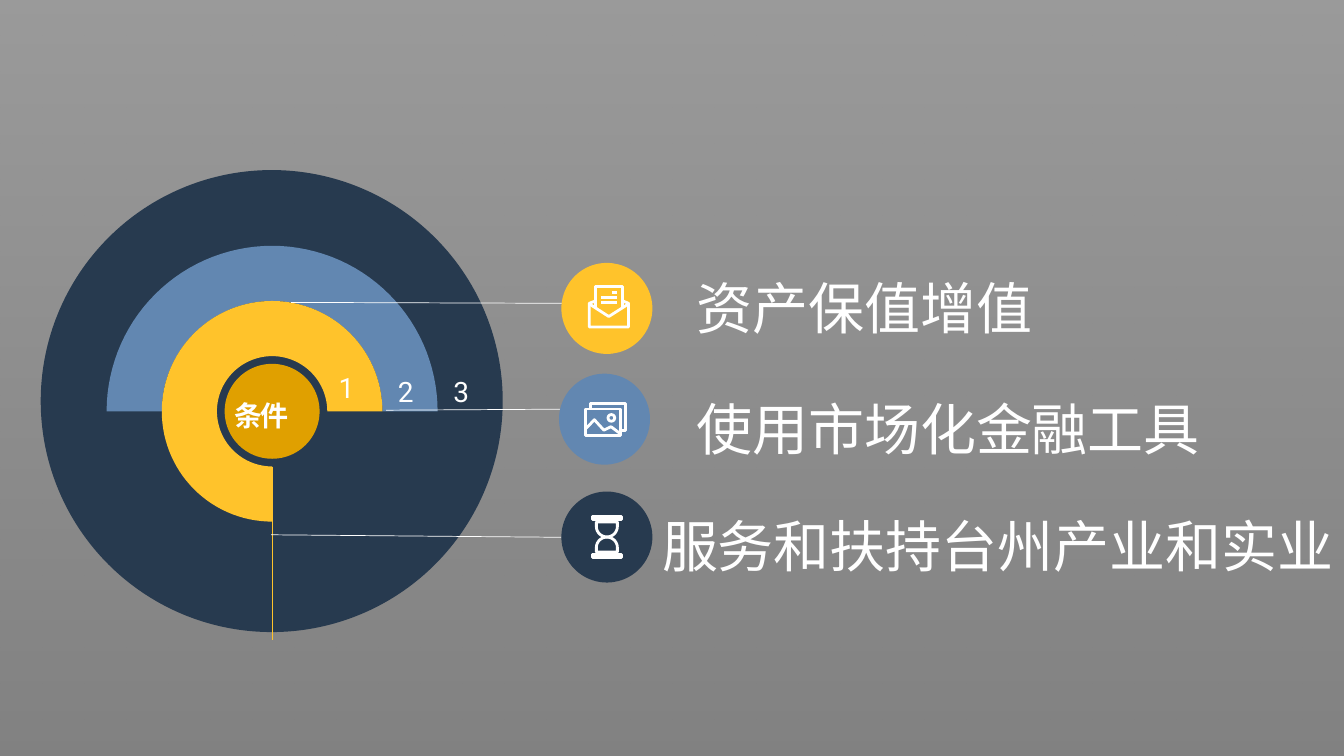
from math import cos, sin, radians

from lxml.etree import SubElement as Sub
from pptx import Presentation
from pptx.dml.color import RGBColor
from pptx.enum.shapes import MSO_CONNECTOR as Link, MSO_SHAPE as Shape
from pptx.enum.text import MSO_ANCHOR as Anchor, MSO_AUTO_SIZE as Fit
from pptx.oxml.ns import qn
from pptx.util import Pt

NAVY, BLUE, GOLD, AMBER, WHITE = "273A4F", "6287B1", "FFC32B", "E0A000", "FFFFFF"
CJK, LATIN = "Noto Sans CJK JP", "Roboto"
HUB = (194.4, 293.8)    # centre of the rings
STEP = 39.4             # width of one ring


def paint(fmt, color):
    fmt.solid()
    fmt.fore_color.rgb = RGBColor.from_string(color)


def style(shape, fill=None, line=None, width=2):
    shape.shadow.inherit = False
    if fill:
        paint(shape.fill, fill)
    else:
        shape.fill.background()
    if line:
        paint(shape.line.fill, line)
        shape.line.width = Pt(width)
    else:
        shape.line.fill.background()


def disc(shapes, x, y, r, fill=None, line=None):
    oval = shapes.add_shape(Shape.OVAL, Pt(x - r), Pt(y - r), Pt(2 * r), Pt(2 * r))
    style(oval, fill, line)


def path(shapes, dots, closed, fill=None, line=None):
    dots = [(Pt(x), Pt(y)) for x, y in dots]
    pen = shapes.build_freeform(*dots[0], scale=1.0)
    pen.add_line_segments(dots[1:], close=closed)
    style(pen.convert_to_shape(), fill, line)


def arc(x, y, r, start, end):
    turn = 3 if end > start else -3
    return [(x + r * cos(radians(a)), y + r * sin(radians(a)))
            for a in range(start, end + turn, turn)]


def ring(shapes, level, start, end, fill):
    outer = arc(*HUB, STEP * (level + 1), start, end)
    inner = arc(*HUB, STEP * level, end, start)
    path(shapes, outer + inner, True, fill)


def rule(shapes, x1, y1, x2, y2, color):
    line = shapes.add_connector(Link.STRAIGHT, Pt(x1), Pt(y1), Pt(x2), Pt(y2))
    paint(line.line.fill, color)
    line.line.width = Pt(0.5)
    Sub(line._element.spPr, qn("a:effectLst"))


def label(shapes, text, x, y, w, h, size, font, bold=False, space=0, anchor=Anchor.TOP):
    frame = shapes.add_textbox(Pt(x), Pt(y), Pt(w), Pt(h)).text_frame
    frame.word_wrap = True
    frame.auto_size = Fit.SHAPE_TO_FIT_TEXT
    frame.vertical_anchor = anchor
    run = frame.paragraphs[0].add_run()
    run.text = text
    run.font.size = Pt(size)
    run.font.bold = bold
    run.font.name = font
    paint(run.font.fill, WHITE)
    props = run._r.get_or_add_rPr()
    Sub(props, qn("a:ea")).set("typeface", CJK)
    if space:
        props.set("spc", str(space))


def shade(shapes, size):
    # Translucent black veil, darker towards the bottom
    veil = shapes.add_shape(Shape.RECTANGLE, 0, 0, *size)
    style(veil)
    veil.fill.gradient()
    veil.fill.gradient_angle = 270
    for stop, at in zip(veil.fill.gradient_stops, (0, 1)):
        stop.color.rgb = RGBColor.from_string("000000")
        stop.position = at
    tints = veil._element.spPr.iter(qn("a:srgbClr"))
    for tint, alpha in zip(tints, ("40000", "50000")):
        Sub(tint, qn("a:alpha")).set("val", alpha)


def badge(shapes, x, y, fill, lines, dot=None):
    # Icon strokes are (closed, points) measured from the badge centre
    group = shapes.add_group_shape().shapes
    disc(group, x, y, 32.5, fill)
    for closed, dots in lines:
        path(group, [(x + dx, y + dy) for dx, dy in dots], closed, line=WHITE)
    if dot:
        dx, dy, r = dot
        disc(group, x + dx, y + dy, r, line=WHITE)


def box(left, top, right, low):
    return True, [(left, top), (right, top), (right, low), (left, low)]


def letter():
    body = [(-7.9, -5.4), (-12.6, -3.6), (-12.6, 13.3),
            (15.5, 13.3), (15.5, -3.6), (11.2, -5.4)]
    sheet = [(-7.9, -0.5), (-7.9, -15.5), (11.2, -15.5), (11.2, -0.5)]
    flap = [(-12.6, -3.2), (1.4, 5.8), (15.5, -3.2)]
    text = [[(x, y), (7.2, y)] for x, y in ((3.6, -11.5), (-4.3, -7.6), (-4.3, -4))]
    return [(False, dots) for dots in [body, sheet, flap] + text]


def photo():
    back = [(-9.7, -8), (-9.7, -11.2), (14.8, -11.2), (14.8, 7.9), (11.5, 7.9)]
    hills = [(-13, 6.5), (-7.2, 0.4), (-0.4, 7.9), (4.7, 5.4), (10.8, 10)]
    return [box(-13.3, -7.2, 11.2, 11.9), (False, back), (False, hills)]


def glass():
    lines = []
    for side in (-1, 1):
        bulb = arc(0, 7.6 * side, 7.5, 0, -180 * side)
        ends = [(-7.5, 10.8 * side), (7.5, 10.8 * side)]
        lines += [box(-10.4, 13.8 * side - 1.1, 10.4, 13.8 * side + 1.1),
                  (True, bulb + ends)]
    return lines


def main():
    deck = Presentation()
    deck.slide_width, deck.slide_height = Pt(960), Pt(540)
    shapes = deck.slides.add_slide(deck.slide_layouts[6]).shapes
    shade(shapes, (deck.slide_width, deck.slide_height))

    # Rings
    disc(shapes, 194.1, 286.5, 165, NAVY)
    rings = shapes.add_group_shape().shapes
    ring(rings, 3, -90, 0, NAVY)
    ring(rings, 2, -180, 0, BLUE)
    ring(rings, 1, -270, 0, GOLD)
    disc(rings, *HUB, 33.9, AMBER)
    for text, x, y in (("1", 234.7, 261.4), ("2", 277.2, 264.2), ("3", 316.8, 264.2)):
        label(shapes, text, x, y, 35, 31.5, 20, LATIN, space=-150)

    # Leader lines
    rule(shapes, 194.4, 333.4, 194.4, 457.2, GOLD)
    rule(shapes, 193.7, 382, 401, 383.8, WHITE)
    rule(shapes, 275.8, 293, 400.3, 292.3, WHITE)
    rule(shapes, 208, 216, 413.3, 216.7, WHITE)

    # Badges
    badge(shapes, 433.5, 383.6, NAVY, glass())
    badge(shapes, 431.8, 299.4, BLUE, photo(), (4.9, -0.9, 2.4))
    badge(shapes, 433.5, 220.3, GOLD, letter())

    # Wording
    label(shapes, "条件", 160.6, 280.8, 74, 31.5, 20, LATIN, True, -150)
    for text, x, y, w in (("资产保值增值", 490.3, 191.5, 343.4),
                          ("使用市场化金融工具", 490.3, 277.9, 525.6),
                          ("服务和扶持台州产业和实业", 465.8, 361.4, 543.6)):
        label(shapes, text, x, y, w, 55.4, 40, CJK, anchor=Anchor.MIDDLE)

    deck.save("out.pptx")


if __name__ == "__main__":
    main()
